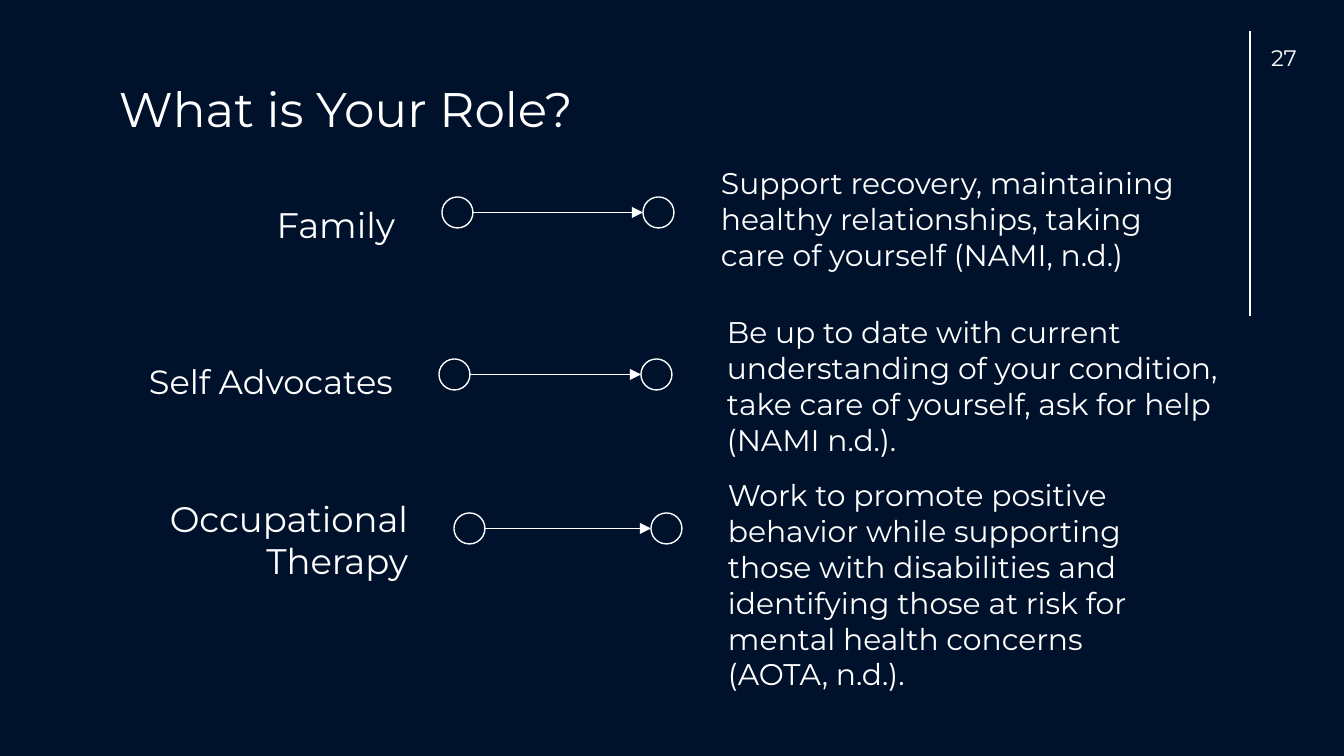
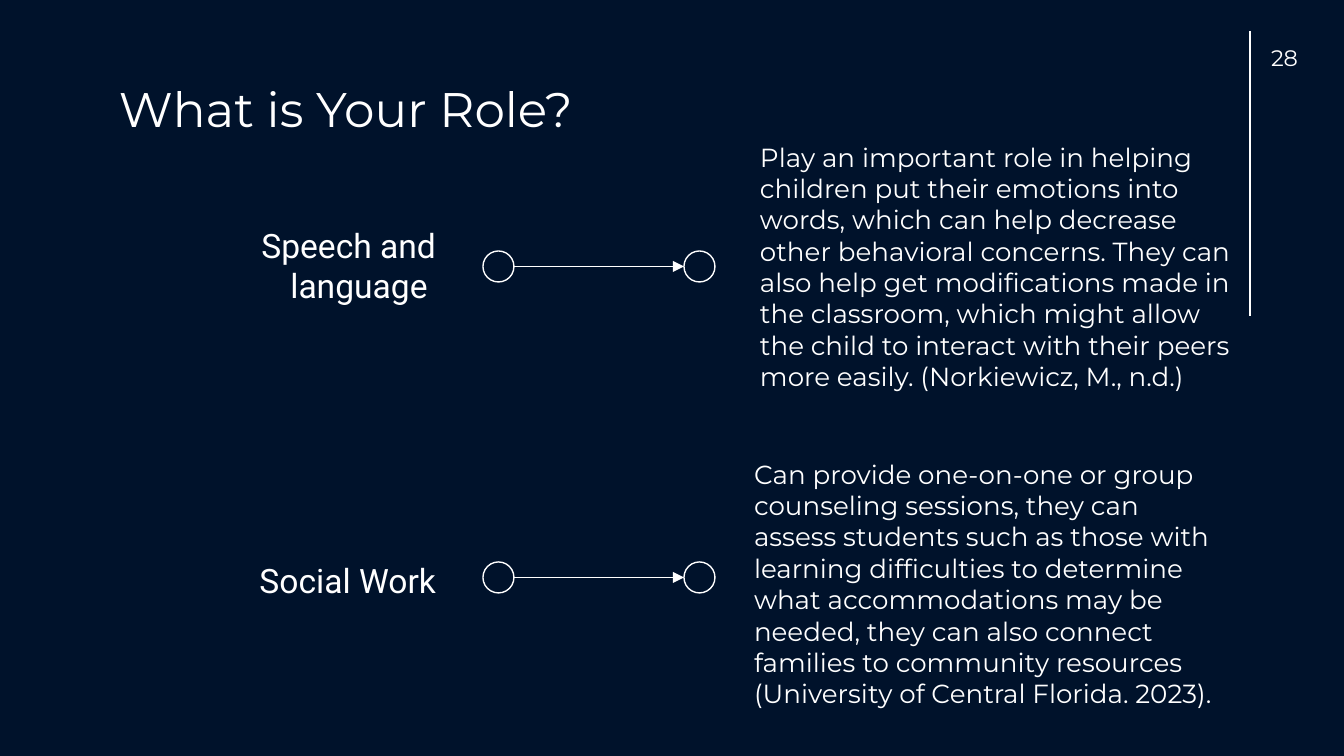
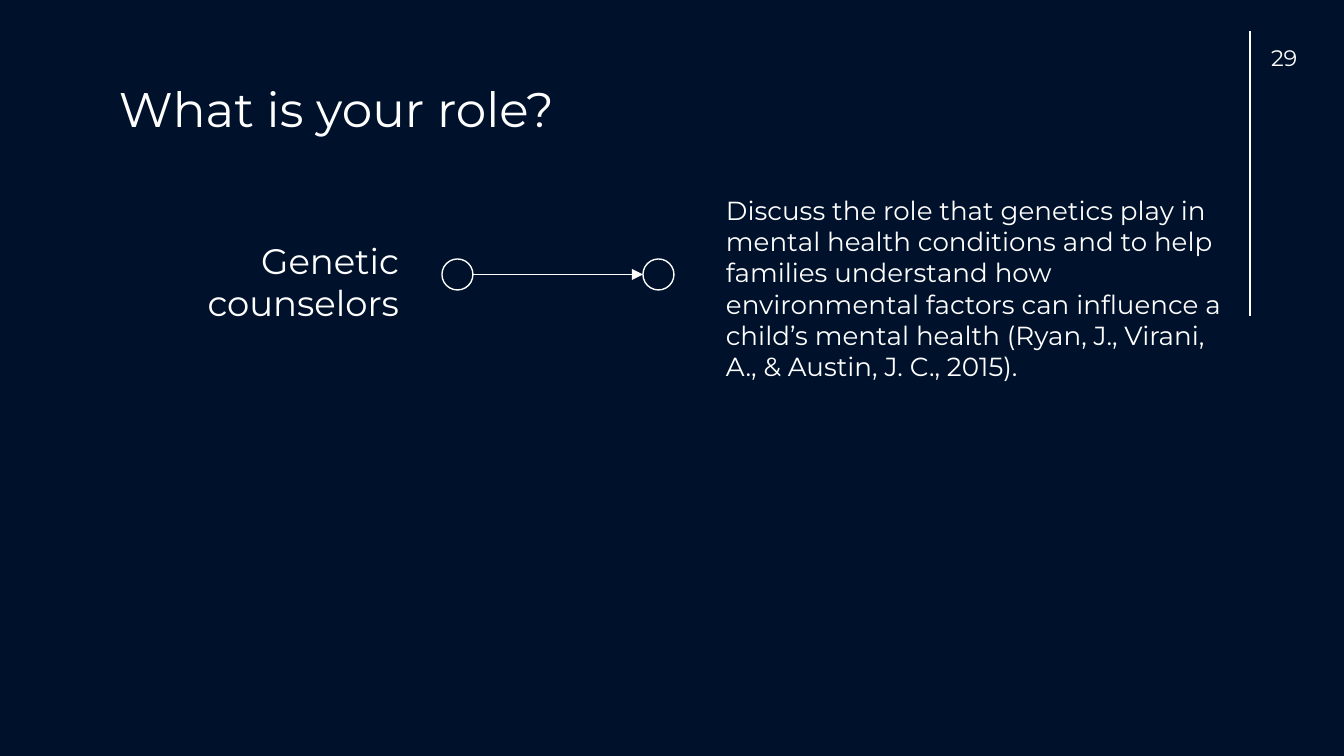
from lxml import etree
from pptx import Presentation
from pptx.dml.color import RGBColor
from pptx.enum.shapes import MSO_CONNECTOR, MSO_SHAPE
from pptx.enum.text import MSO_ANCHOR, PP_ALIGN
from pptx.oxml.ns import qn
from pptx.util import Pt

STRAIGHT, ELBOW = MSO_CONNECTOR.STRAIGHT, MSO_CONNECTOR.ELBOW
OVAL = MSO_SHAPE.OVAL
TOP = MSO_ANCHOR.TOP
LEFT, RIGHT = PP_ALIGN.LEFT, PP_ALIGN.RIGHT
NAVY, WHITE = "00122B", "FFFFFF"
MONTSERRAT, ROBOTO = "Montserrat", "Roboto"
EMU_PER_PX = 914400 / 134.4
INSET = 13
CIRCLE = 31
LINE_WIDTH = Pt(0.75)

SLIDES = [
    ("What is Your Role?", 27, [
        (("Family", (220, 190, 188, 71), 19, MONTSERRAT), (442, 643, 197),
         ("Support recovery, maintaining healthy relationships, taking care of "
          "yourself (NAMI, n.d.)", (708, 152, 509, 146), 16)),
        (("Self Advocates", (89, 348, 317, 62), 18, MONTSERRAT), (439, 641, 359),
         ("Be up to date with current understanding of your condition, take care "
          "of yourself, ask for help (NAMI n.d.).", (714, 301, 525, 161), 16)),
        (("Occupational Therapy", (121, 484, 300, 89), 19, MONTSERRAT), (454, 651, 513),
         ("Work to promote positive behavior while supporting those with "
          "disabilities and identifying those at risk for mental health concerns "
          "(AOTA, n.d.).", (715, 464, 481, 241), 16)),
    ]),
    ("What is Your Role?", 28, [
        (("Speech and language ", (183, 212, 266, 109), 18, ROBOTO), (483, 684, 251),
         ("Play an important role in helping children put their emotions into "
          "words, which can help decrease other behavioral concerns. They can also "
          "help get modifications made in the classroom, which might allow the "
          "child to interact with their peers more easily. (Norkiewicz, M., n.d.)",
          (747, 128, 511, 277), 14)),
        (("Social Work", (183, 547, 266, 62), 18, ROBOTO), (483, 684, 562),
         ("Can provide one-on-one or group counseling sessions, they can assess "
          "students such as those with learning difficulties to determine what "
          "accommodations may be needed, they can also connect families to "
          "community resources (University of Central Florida. 2023).",
          (741, 445, 497, 266), 14)),
    ]),
    ("What is your role?", 29, [
        (("Genetic counselors", (95, 226, 317, 132), 19, MONTSERRAT), (442, 643, 259),
         ("Discuss the role that genetics play in mental health conditions and to "
          "help families understand how environmental factors can influence a "
          "child’s mental health (Ryan, J., Virani, A., & Austin, J. C., 2015).",
          (713, 181, 525, 220), 14)),
    ]),
]


def px(n):
    return round(n * EMU_PER_PX)


def color(value):
    return RGBColor.from_string(value)


def add_text(s, text, box, size, font=MONTSERRAT, align=LEFT):
    tb = s.shapes.add_textbox(*map(px, box))
    tf = tb.text_frame
    tf.word_wrap = True
    tf.vertical_anchor = TOP
    tf.margin_left = tf.margin_right = tf.margin_top = tf.margin_bottom = px(INSET)
    tf.text = text
    p = tf.paragraphs[0]
    p.alignment = align
    r = p.runs[0]
    r.font.name = font
    r.font.size = Pt(size)
    r.font.color.rgb = color(WHITE)


def add_line(s, kind, x1, y1, x2, y2, arrow=False):
    cn = s.shapes.add_connector(kind, px(x1), px(y1), px(x2), px(y2))
    cn.line.color.rgb = color(WHITE)
    cn.line.width = LINE_WIDTH
    if arrow:
        etree.SubElement(cn.line._get_or_add_ln(), qn("a:tailEnd"), type="triangle")
    etree.SubElement(cn._element.spPr, qn("a:effectLst"))


def add_circle(s, x, y):
    sp = s.shapes.add_shape(OVAL, px(x), px(y), px(CIRCLE), px(CIRCLE))
    sp.shadow.inherit = False
    sp.fill.background()
    sp.line.color.rgb = color(WHITE)
    sp.line.width = LINE_WIDTH


def add_role(s, label, link, duty):
    text, box, size, font = label
    add_text(s, text, box, size, font, RIGHT)
    start, end, y = link
    add_circle(s, start, y)
    add_circle(s, end, y)
    middle = y + CIRCLE / 2
    add_line(s, ELBOW, start + CIRCLE, middle, end, middle, arrow=True)
    add_text(s, *duty)


def add_role_slide(prs, title, number, roles):
    s = prs.slides.add_slide(prs.slide_layouts[6])
    s.background.fill.solid()
    s.background.fill.fore_color.rgb = color(NAVY)
    add_line(s, STRAIGHT, 1250, 31, 1250, 316)
    add_text(s, title, (106, 66, 1133, 85), 26)
    add_text(s, str(number), (1258, 31, 81, 47), 12)
    for role in roles:
        add_role(s, *role)


def main():
    prs = Presentation()
    prs.slide_width, prs.slide_height = px(1344), px(756)
    for title, number, roles in SLIDES:
        add_role_slide(prs, title, number, roles)
    prs.save("out.pptx")


if __name__ == "__main__":
    main()
